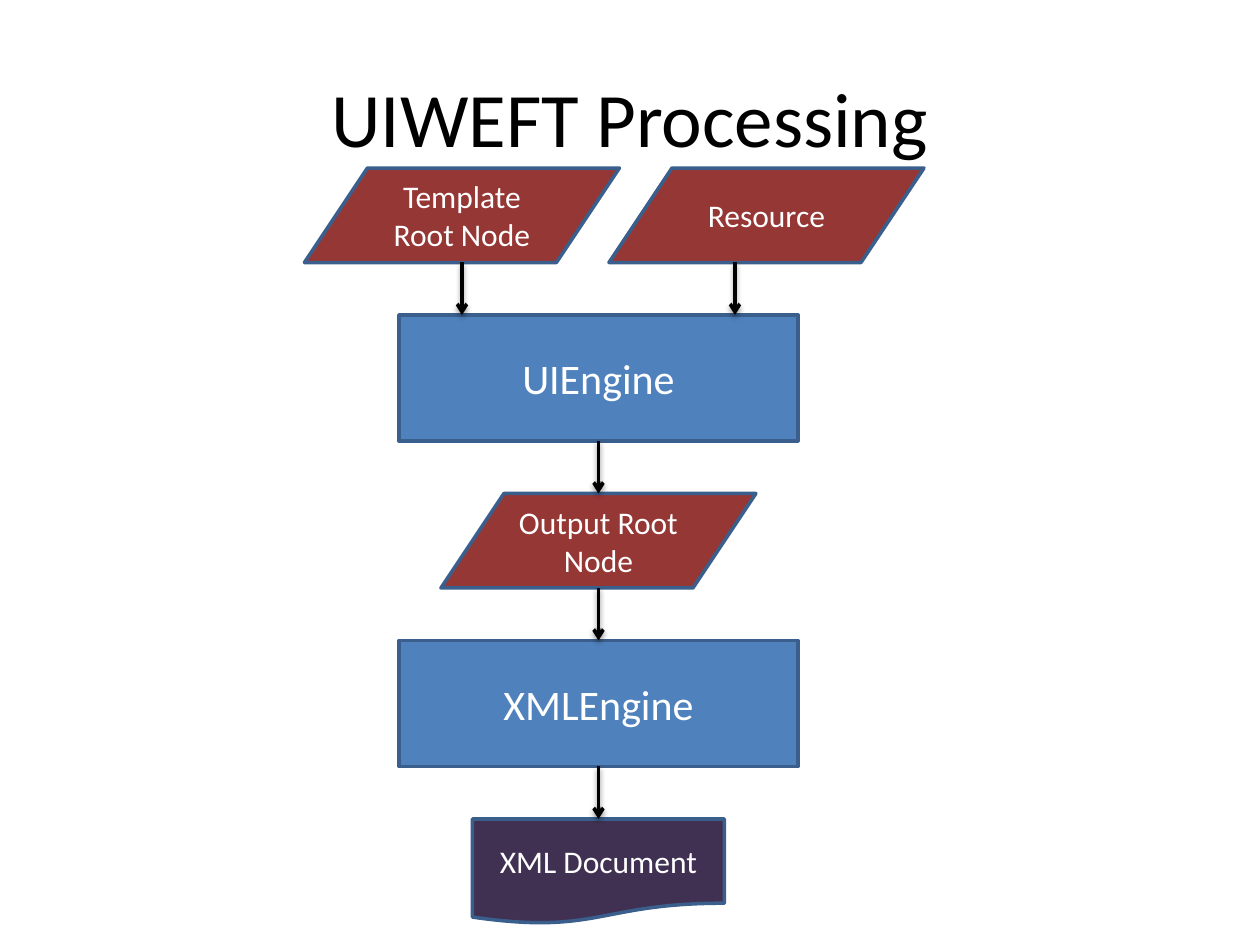
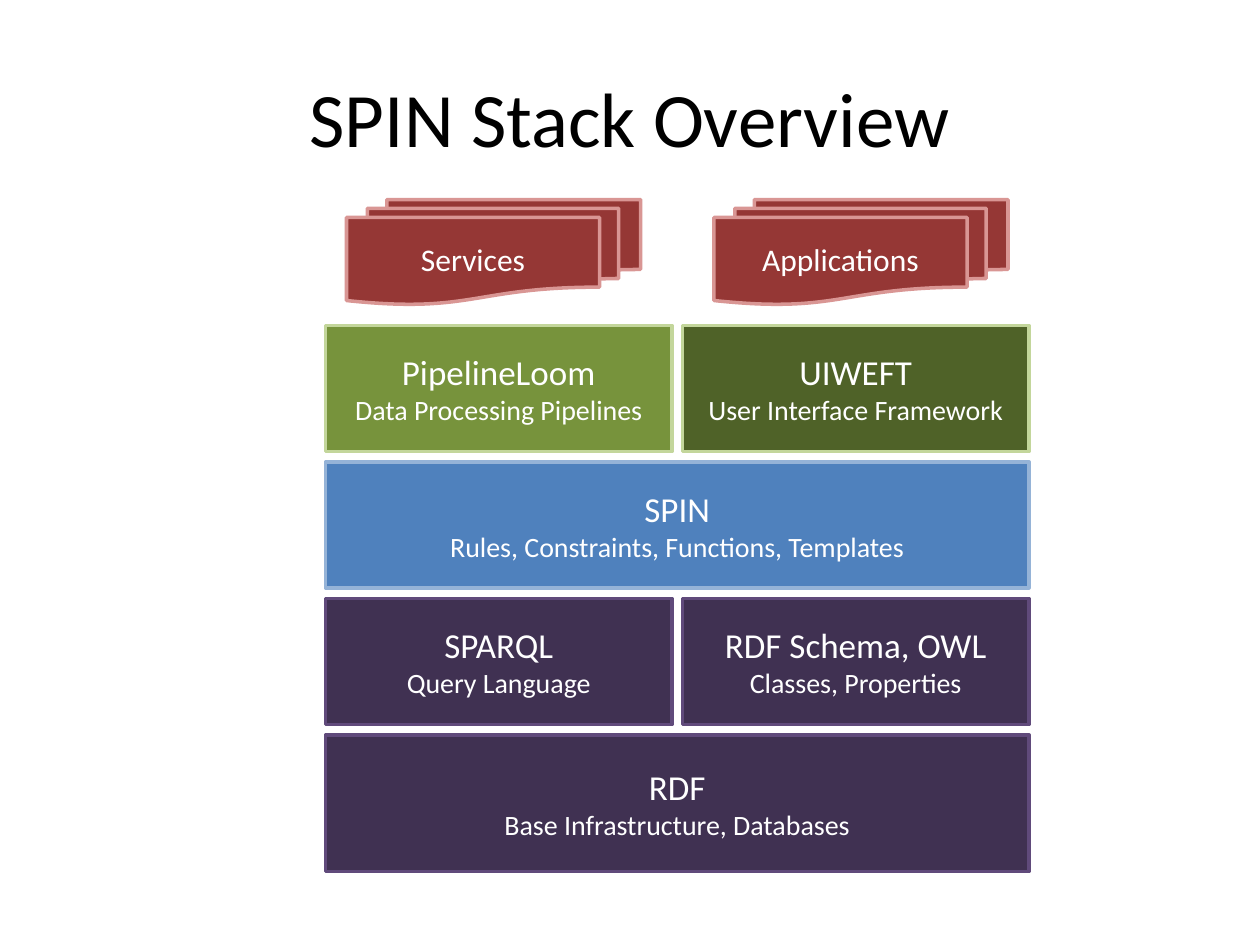
from lxml import etree
from pptx import Presentation
from pptx import util as u
from pptx.dml.color import RGBColor
from pptx.enum import shapes, text
from pptx.oxml.ns import qn

Pt = u.Pt
SHAPE = shapes.MSO_SHAPE
FONT = "Calibri"
UI_FRAMEWORK = "UIWEFT"
C = {
    "black": "000000", "white": "FFFFFF",
    "blue": "4F81BD", "blue_edge": "3A5F8C", "blue_light": "95B3D7",
    "red": "953735", "red_light": "D99694",
    "purple": "403152", "purple_edge": "604A7B",
    "green": "77933C", "green_dark": "4F6228", "green_light": "C3D69B",
}


def rgb(name):
    return RGBColor.from_string(C[name])


def write(sp, *lines, sizes=(18,), color="white"):
    """Fill a shape with centred paragraphs, one size for each line."""
    tf = sp.text_frame
    tf.word_wrap = True
    tf.vertical_anchor = text.MSO_ANCHOR.MIDDLE
    for i, (line, size) in enumerate(zip(lines, sizes)):
        p = tf.paragraphs[0] if i == 0 else tf.add_paragraph()
        p.alignment = text.PP_ALIGN.CENTER
        r = p.add_run()
        r.text = line
        r.font.name, r.font.size = FONT, Pt(size)
        r.font.color.rgb = rgb(color)


def add_block(s, kind, box, fill, edge, *lines, sizes=(18,)):
    sp = s.shapes.add_shape(kind, *map(Pt, box))
    sp.shadow.inherit = False
    sp.fill.solid()
    sp.fill.fore_color.rgb = rgb(fill)
    sp.line.color.rgb = rgb(edge)
    sp.line.width = Pt(2)
    write(sp, *lines, sizes=sizes)


def add_arrow(s, x, top, length):
    """Draw a downward arrow with a soft shadow below it."""
    cn = s.shapes.add_connector(shapes.MSO_CONNECTOR.STRAIGHT,
                                Pt(x), Pt(top), Pt(x), Pt(top + length))
    cn.line.color.rgb = rgb("black")
    cn.line.width = Pt(2)
    etree.SubElement(cn.line._ln, qn("a:tailEnd"), type="arrow")
    effects = etree.SubElement(cn._element.spPr, qn("a:effectLst"))
    shadow = etree.SubElement(effects, qn("a:outerShdw"), blurRad=str(Pt(3.1)),
                              dist=str(Pt(1.6)), dir="5400000", rotWithShape="0")
    clr = etree.SubElement(shadow, qn("a:srgbClr"), val=C["black"])
    etree.SubElement(clr, qn("a:alpha"), val="38000")


def add_titled_slide(prs, title):
    s = prs.slides.add_slide(prs.slide_layouts[5])
    sp = s.shapes.title
    sp.left, sp.top, sp.width, sp.height = map(Pt, (36, 21.6, 648, 90))
    write(sp, title, sizes=(44,), color="black")
    return s


def draw_flow(s, left, top):
    """Two inputs, then a centred chain of steps joined by arrows."""
    data_w, data_h, gap, mid = 180, 54, 30, left + 168

    # Inputs
    for i, label in enumerate(("Template Root Node", "Resource")):
        add_block(s, SHAPE.FLOWCHART_DATA, (left + i * 174, top, data_w, data_h),
                  "red", "blue_edge", label)

    # Steps: kind, width, height, fill, label, text size, incoming arrow offsets
    steps = (
        (SHAPE.RECTANGLE, 228, 72, "blue", "UIEngine", 24, (-78, 78)),
        (SHAPE.FLOWCHART_DATA, data_w, data_h, "red", "Output Root Node", 18, (0,)),
        (SHAPE.RECTANGLE, 228, 72, "blue", "XMLEngine", 24, (0,)),
        (SHAPE.FLOWCHART_DOCUMENT, 144, 60, "purple", "XML Document", 18, (0,)),
    )
    y = top + data_h
    for kind, w, h, fill, label, size, offsets in steps:
        add_block(s, kind, (mid - w / 2, y + gap, w, h), fill, "blue_edge",
                  label, sizes=(size,))
        for dx in offsets:
            add_arrow(s, mid + dx, y, gap)
        y += gap + h


def draw_stack(s, left, top, width):
    """Document stacks above rows of equal layers."""
    gap = 6

    # Products on top
    for i, label in enumerate(("Services", "Applications")):
        add_block(s, SHAPE.FLOWCHART_MULTIDOCUMENT,
                  (left + 12 + i * 210, top, 168, 60), "red", "red_light", label)

    # Layers: row height, then fill, edge, name and purpose of each cell
    layers = (
        (72, (("green", "green_light", "PipelineLoom", "Data Processing Pipelines"),
              ("green_dark", "green_light", UI_FRAMEWORK, "User Interface Framework"))),
        (72, (("blue", "blue_light", "SPIN",
               "Rules, Constraints, Functions, Templates"),)),
        (72, (("purple", "purple_edge", "SPARQL", "Query Language"),
              ("purple", "purple_edge", "RDF Schema, OWL", "Classes, Properties"))),
        (78, (("purple", "purple_edge", "RDF", "Base Infrastructure, Databases"),)),
    )
    y = top + 72
    for h, cells in layers:
        w = (width - gap * (len(cells) - 1)) / len(cells)
        for i, (fill, edge, name, purpose) in enumerate(cells):
            add_block(s, SHAPE.RECTANGLE, (left + i * (w + gap), y, w, h),
                      fill, edge, name, purpose, sizes=(20, 16))
        y += h + gap


def main():
    prs = Presentation()
    prs.slide_width, prs.slide_height = Pt(720), Pt(540)
    draw_flow(add_titled_slide(prs, f"{UI_FRAMEWORK} Processing"), 174, 96)
    draw_stack(add_titled_slide(prs, "SPIN Stack Overview"), 186, 114, 402)
    prs.save("out.pptx")


if __name__ == "__main__":
    main()
